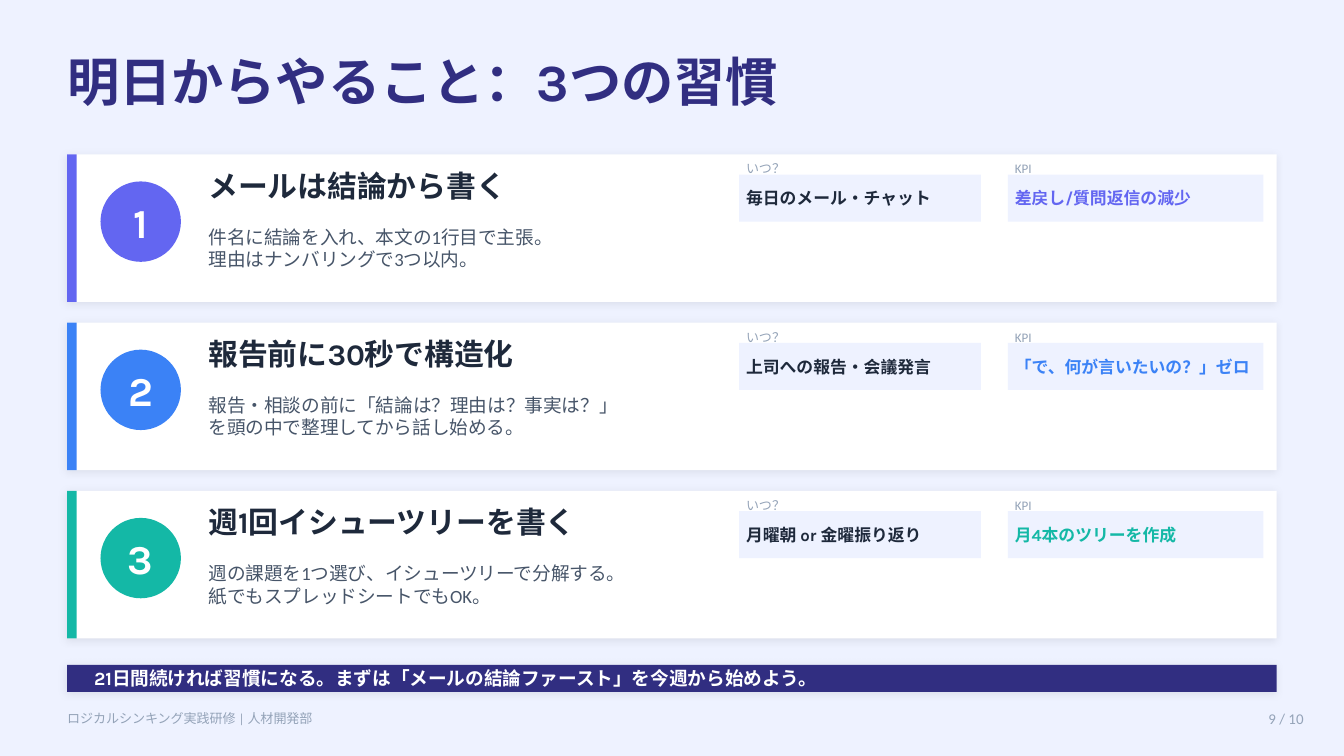
import pptx
import pptx.util
import pptx.dml.color
import pptx.enum.shapes
import pptx.enum.text
import pptx.oxml
import pptx.oxml.ns

Cm = pptx.util.Cm
SHAPE = pptx.enum.shapes.MSO_SHAPE
ALIGN = pptx.enum.text.PP_ALIGN
HEX = {
    "paper": "EEF2FF", "navy": "312E81", "white": "FFFFFF", "ink": "1E293B",
    "slate": "475569", "mute": "94A3B8",
    "violet": "6366F1", "blue": "3B82F6", "teal": "14B8A6",
}
SHADE = (
    '<a:effectLst %s><a:outerShdw blurRad="50800" dist="12700" dir="8100000" '
    'algn="bl" rotWithShape="0"><a:srgbClr val="000000"><a:alpha val="8000"/>'
    '</a:srgbClr></a:outerShdw></a:effectLst>' % pptx.oxml.ns.nsdecls("a")
)


def tint(name):
    return pptx.dml.color.RGBColor.from_string(HEX[name])


def write(shape, text, size=10, font="Calibri", hue="ink", bold=False,
          align=ALIGN.LEFT, left=0, right=0):
    frame = shape.text_frame
    frame.word_wrap = True
    frame.auto_size = pptx.enum.text.MSO_AUTO_SIZE.NONE
    frame.vertical_anchor = pptx.enum.text.MSO_ANCHOR.MIDDLE
    frame.margin_top = frame.margin_bottom = 0
    frame.margin_left, frame.margin_right = Cm(left), Cm(right)
    frame.text = text
    for para in frame.paragraphs:
        para.alignment = align
        para.font.size = pptx.util.Pt(size)
        para.font.name = font
        para.font.bold = bold
        para.font.color.rgb = tint(hue)


class Deck:
    head = "Karla"

    def __init__(self, width, height):
        self.show = pptx.Presentation()
        self.show.slide_width, self.show.slide_height = Cm(width), Cm(height)
        self.slide = self.show.slides.add_slide(self.show.slide_layouts[5])
        back = self.slide.background.fill
        back.solid()
        back.fore_color.rgb = tint("paper")

    def title(self, text, x, y, w, h):
        shape = self.slide.shapes.title
        shape.left, shape.top, shape.width, shape.height = map(Cm, (x, y, w, h))
        write(shape, text, size=28, font=self.head, hue="navy", bold=True)

    def block(self, hue, x, y, w, h, kind=SHAPE.RECTANGLE, shade=False):
        shape = self.slide.shapes.add_shape(kind, *map(Cm, (x, y, w, h)))
        shape.fill.solid()
        shape.fill.fore_color.rgb = tint(hue)
        shape.line.fill.background()
        if shade:
            shape._element.spPr.append(pptx.oxml.parse_xml(SHADE))
        else:
            shape.shadow.inherit = False
        return shape

    def label(self, text, x, y, w, h, **form):
        box = self.slide.shapes.add_textbox(*map(Cm, (x, y, w, h)))
        write(box, text, **form)

    def field(self, name, value, hue, x, y, w):
        self.label(name, x + 0.13, y - 0.3, w - 0.25, 0.38, size=7, hue="mute")
        chip = self.block("paper", x, y, w, 0.89)
        write(chip, value, size=9, font=self.head, hue=hue, bold=True, left=0.13)

    def card(self, mark, hue, name, note, when, goal, y):
        self.block("white", 1.27, y, 22.86, 2.79, shade=True)
        self.block(hue, 1.27, y, 0.18, 2.79)
        disc = self.block(hue, 1.9, y + 0.51, 1.52, 1.52, kind=SHAPE.OVAL)
        write(disc, mark, size=22, font=self.head, hue="white", bold=True,
              align=ALIGN.CENTER)
        self.label(name, 3.94, y + 0.2, 8.89, 0.76, size=16, font=self.head, bold=True)
        self.label(note, 3.94, y + 1.07, 8.89, 1.4, hue="slate")
        self.field("いつ？", when, "ink", 13.97, y + 0.38, 4.57)
        self.field("KPI", goal, hue, 19.05, y + 0.38, 4.83)

    def band(self, text, x, y, w, h):
        bar = self.block("navy", x, y, w, h, shade=True)
        write(bar, text, font=self.head, hue="white", bold=True, left=0.51)


HABITS = [
    ("violet", "メールは結論から書く",
     "件名に結論を入れ、本文の1行目で主張。\n理由はナンバリングで3つ以内。",
     "毎日のメール・チャット", "差戻し/質問返信の減少"),
    ("blue", "報告前に30秒で構造化",
     "報告・相談の前に「結論は？理由は？事実は？」\nを頭の中で整理してから話し始める。",
     "上司への報告・会議発言", "「で、何が言いたいの？」ゼロ"),
    ("teal", "週1回イシューツリーを書く",
     "週の課題を1つ選び、イシューツリーで分解する。\n紙でもスプレッドシートでもOK。",
     "月曜朝 or 金曜振り返り", "月4本のツリーを作成"),
]


def main():
    deck = Deck(25.4, 14.29)
    deck.title("明日からやること：3つの習慣", 1.27, 0.76, 22.86, 1.52)
    for rank, (hue, name, note, when, goal) in enumerate(HABITS):
        deck.card(str(rank + 1), hue, name, note, when, goal, 2.92 + 3.18 * rank)
    deck.band("21日間続ければ習慣になる。まずは「メールの結論ファースト」を今週から始めよう。",
              1.27, 12.57, 22.86, 0.51)
    deck.label("9 / 10", 23.11, 13.26, 1.78, 0.64, size=8, hue="mute",
               align=ALIGN.RIGHT, left=0.25, right=0.25)
    deck.label("ロジカルシンキング実践研修 | 人材開発部", 1.02, 13.26, 12.7, 0.64,
               size=7, hue="mute", left=0.25, right=0.25)
    deck.show.save("out.pptx")


if __name__ == "__main__":
    main()
